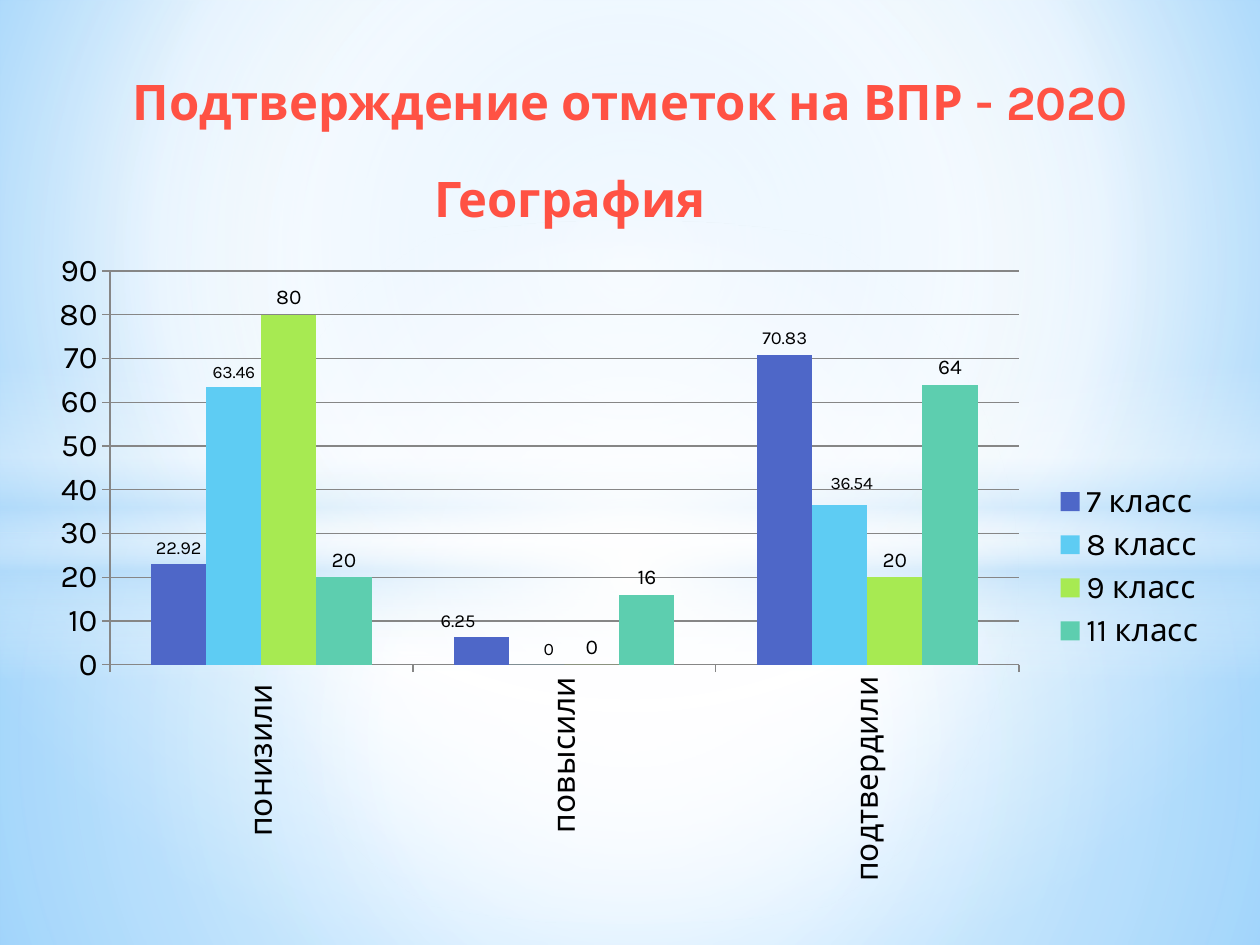
"""Build a slide that charts how school marks in geography were confirmed."""
from lxml import etree
from pptx import Presentation
from pptx import util as u
from pptx.chart.data import CategoryChartData
from pptx.dml.color import RGBColor
from pptx.enum import chart as ch, shapes, text
from pptx.oxml.ns import qn

FONT = "Karla"
COLORS = {
    "white": "FFFFFF", "haze": "B4DCFA", "sky": "9ED5FF", "edge": "5BB9FF",
    "heading": "FF5244", "ink": "000000", "grid": "868686",
}
CENTRE = (50, 50, 50, 50)
GLOWS = [
    ("RECTANGLE", (0, 4.23, 10, 3.27), CENTRE,
     [(0, "white", 91), (37, "white", 76), (100, "haze", 79)]),
    ("RECTANGLE", (0, 0, 10, 4.23), CENTRE,
     [(0, "white", 89), (48, "white", 62), (100, "haze", 79)]),
    ("RECTANGLE", (0, 2.9, 10, 2.5), None,
     [(0, "white", 0), (29, "white", 30), (45, "haze", 40),
      (55, "white", 26), (65, "haze", 60), (100, "white", 0)]),
    ("OVAL", (0, 1.75, 10, 5.58), CENTRE, [(0, "white", 100), (54, "white", 0)]),
]
HEADINGS = [
    ("Подтверждение отметок на ВПР - 2020", (0.67, 0.52, 8.66, 0.57)),
    ("География", (1.77, 1.29, 5.51, 0.57)),
]
CATEGORIES = ["понизили ", "повысили", "подтвердили"]
CLASSES = [
    ("7 класс", (22.92, 6.25, 70.83), "4E67C8", 10.5, {1: (-0.02, 0)}),
    ("8 класс", (63.46, 0, 36.54), "5ECCF3", 10, {1: (0.01, 0), 2: (0.01, -0.01)}),
    ("9 класс", (80, 0, 20), "A7EA52", 12, {}),
    ("11 класс", (20, 16, 64), "5DCEAF", 12, {}),
]
PLOT_AREA = {"x": 0.06, "y": 0.05, "w": 0.77, "h": 0.6}


def inches(box):
    """Turn a box of numbers into lengths."""
    return [u.Inches(value) for value in box]


def add_node(parent, tag, **attributes):
    """Append an XML child with the given attributes."""
    node = etree.SubElement(parent, qn(tag))
    for name, value in attributes.items():
        node.set(name, str(value))
    return node


def style(target, **values):
    """Set each format value on the target."""
    for name, value in values.items():
        setattr(target, name, value)


def style_font(font, size, color="ink", bold=False):
    """Give a font the slide's typeface, a size and a colour."""
    style(font, name=FONT, size=u.Pt(size), bold=bold)
    font.color.rgb = RGBColor.from_string(COLORS[color])


def paint_gradient(fill, owner, stops, focus):
    """Fill with a radial gradient around focus, or a vertical one without it."""
    fill.gradient()
    gradient = next(owner.element.iter(qn("a:gradFill")))
    for child in list(gradient):
        gradient.remove(child)
    stop_list = add_node(gradient, "a:gsLst")
    for position, color, opacity in stops:
        stop = add_node(stop_list, "a:gs", pos=position * 1000)
        tint = add_node(stop, "a:srgbClr", val=COLORS[color])
        add_node(tint, "a:alpha", val=opacity * 1000)
    if focus:
        circle = add_node(gradient, "a:path", path="circle")
        sides = {side: value * 1000 for side, value in zip("ltrb", focus)}
        add_node(circle, "a:fillToRect", **sides)
    else:
        add_node(gradient, "a:lin", ang=90 * 60000, scaled=0)


def add_glow(slide, outline, box, focus, stops):
    """Add one translucent layer of the backdrop."""
    glow = slide.shapes.add_shape(shapes.MSO_SHAPE[outline], *inches(box))
    glow.shadow.inherit = False
    glow.line.fill.background()
    paint_gradient(glow.fill, glow, stops, focus)


def add_heading(slide, wording, box):
    """Add a centred bold heading."""
    frame = slide.shapes.add_textbox(*inches(box)).text_frame
    style(frame, word_wrap=True, auto_size=text.MSO_AUTO_SIZE.SHAPE_TO_FIT_TEXT)
    paragraph = frame.paragraphs[0]
    paragraph.alignment = text.PP_ALIGN.CENTER
    run = paragraph.add_run()
    run.text = wording
    style_font(run.font, 28, "heading", True)


def add_manual_layout(layout, target=None, **fractions):
    """Place a chart part by fractions of the chart area."""
    manual = add_node(layout, "c:manualLayout")
    if target:
        add_node(manual, "c:layoutTarget", val=target)
        for mode in ("c:xMode", "c:yMode"):
            add_node(manual, mode, val="edge")
    for name, value in fractions.items():
        add_node(manual, f"c:{name}", val=value)


def style_series(series, color, label_size, shifts):
    """Colour a series and label its columns, moving some labels aside."""
    series.format.fill.solid()
    series.format.fill.fore_color.rgb = RGBColor.from_string(color)
    series.invert_if_negative = False
    labels = series.data_labels
    position = ch.XL_LABEL_POSITION.OUTSIDE_END
    style(labels, show_value=True, position=position)
    style_font(labels.font, label_size)
    for index, (across, down) in shifts.items():
        label = series.points[index].data_label
        style_font(label.font, label_size)
        label.position = position
        for entry in labels._element.findall(qn("c:dLbl")):
            if entry.find(qn("c:idx")).get("val") == str(index):
                layout = etree.Element(qn("c:layout"))
                entry.insert(1, layout)
                add_manual_layout(layout, x=across, y=down)


def add_marks_chart(slide, box):
    """Add the clustered columns for all classes."""
    data = CategoryChartData()
    data.categories = CATEGORIES
    for name, values, *_ in CLASSES:
        data.add_series(name, values)
    chart = slide.shapes.add_chart(
        ch.XL_CHART_TYPE.COLUMN_CLUSTERED, *inches(box), data).chart
    style(chart, has_title=False, has_legend=True)
    style_font(chart.font, 18)
    style(chart.legend, position=ch.XL_LEGEND_POSITION.RIGHT, include_in_layout=False)
    plot = chart.plots[0]
    style(plot, gap_width=150, overlap=0, vary_by_categories=False)
    for series, (_, _, color, size, shifts) in zip(plot.series, CLASSES):
        style_series(series, color, size, shifts)
    marks, groups = chart.value_axis, chart.category_axis
    style(marks, minimum_scale=0, maximum_scale=90, major_unit=10,
          has_major_gridlines=True)
    for axis in (marks, groups):
        axis.major_tick_mark = ch.XL_TICK_MARK.OUTSIDE
    for ruled in (marks, groups, marks.major_gridlines):
        ruled.format.line.color.rgb = RGBColor.from_string(COLORS["grid"])
        ruled.format.line.width = u.Pt(0.75)
    style_font(groups.tick_labels.font, 18)
    next(groups._element.iter(qn("a:bodyPr"))).set("rot", str(-90 * 60000))
    area = next(chart.element.iter(qn("c:plotArea")))
    for layout in area.findall(qn("c:layout")):
        area.remove(layout)
    layout = etree.Element(qn("c:layout"))
    area.insert(0, layout)
    add_manual_layout(layout, "inner", **PLOT_AREA)


def main():
    """Build and save the slide."""
    deck = Presentation()
    style(deck, slide_width=u.Inches(10), slide_height=u.Inches(7.5))
    slide = deck.slides.add_slide(deck.slide_layouts[6])
    paint_gradient(slide.background.fill, slide,
                   [(0, "sky", 100), (60, "white", 100), (100, "edge", 100)],
                   (20, 10, 20, 60))
    for glow in GLOWS:
        add_glow(slide, *glow)
    title, subject = HEADINGS
    add_heading(slide, *title)
    add_marks_chart(slide, (0.31, 1.89, 9.37, 5.21))
    add_heading(slide, *subject)
    deck.save("out.pptx")


if __name__ == "__main__":
    main()
